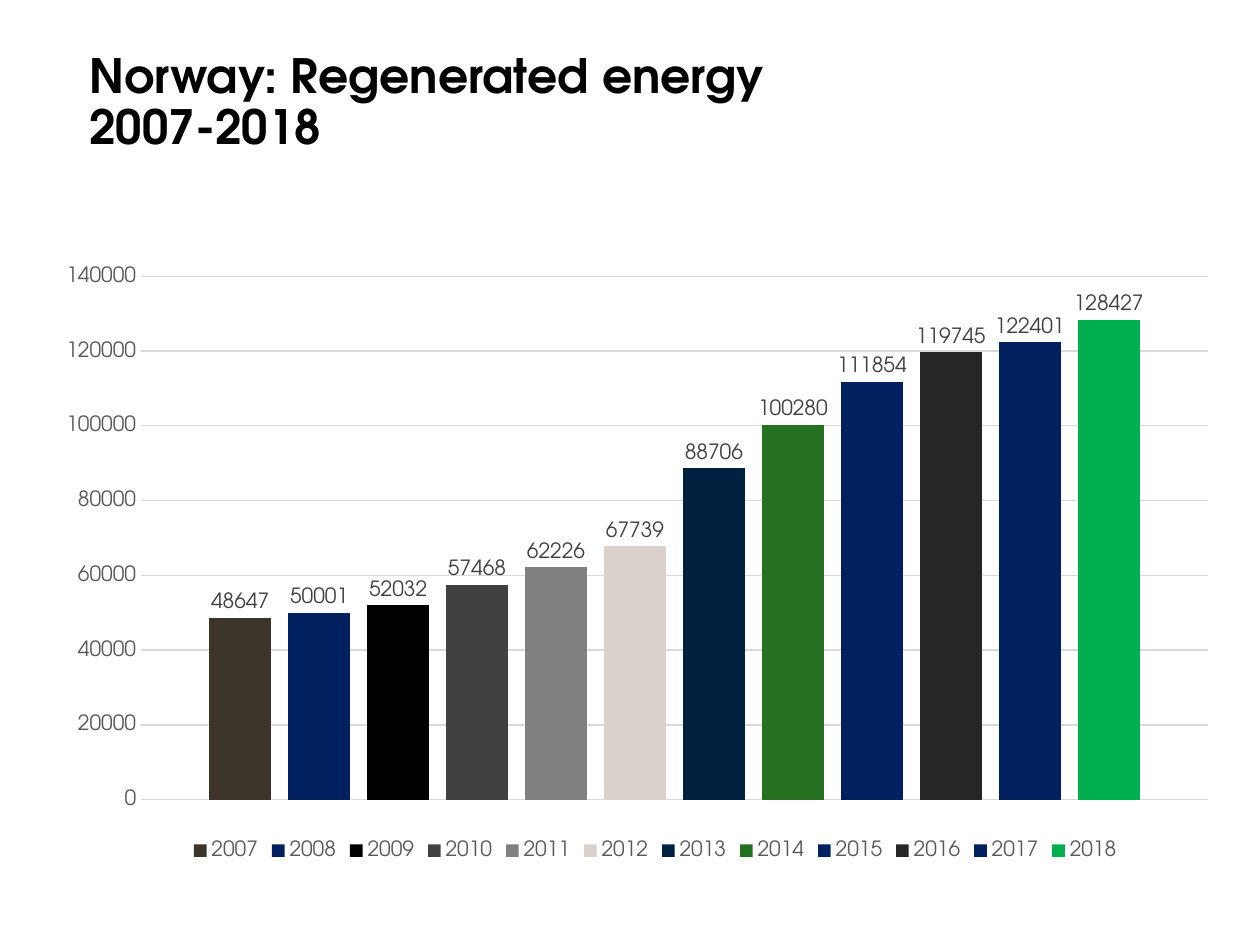
"""Build a slide with a column chart of Norway's regenerated energy by year."""
from dataclasses import dataclass

from lxml import etree
from pptx import Presentation
from pptx import util as u
from pptx.chart.data import CategoryChartData
from pptx.dml.color import RGBColor
from pptx.enum import chart as ch, text
from pptx.oxml.ns import qn


@dataclass(frozen=True)
class Theme:
    face: str = "TeX Gyre Adventor"
    ink: str = "000000"
    axis: str = "595959"
    label: str = "404040"
    grid: str = "D9D9D9"
    head: int = 27
    small: int = 12


THEME = Theme()
WIDE, HIGH = 10, 7.5
TITLE = ["Norway: Regenerated energy", "2007-2018"]
YEARS = [
    ("2007", 48647, "3D342C"),
    ("2008", 50001, "002060"),
    ("2009", 52032, "000000"),
    ("2010", 57468, "404040"),
    ("2011", 62226, "808080"),
    ("2012", 67739, "D9D1CA"),
    ("2013", 88706, "002241"),
    ("2014", 100280, "257122"),
    ("2015", 111854, "002060"),
    ("2016", 119745, "262626"),
    ("2017", 122401, "002060"),
    ("2018", 128427, "00B050"),
]
TITLE_BOX = (0.071, 0.048, 0.788, 0.116)
CHART_BOX = (0.04, 0.213, 0.96, 0.703)
PLOT = {"x": 0.075, "y": 0.113, "w": 0.882, "h": 0.788}


def place(box):
    """Turn shares of the slide into lengths."""
    return [u.Inches(part * size) for part, size in zip(box, (WIDE, HIGH) * 2)]


def style(font, size, color, bold=False):
    """Set face, size, colour and weight of a font."""
    font.name, font.size, font.bold = THEME.face, u.Pt(size), bold
    font.color.rgb = RGBColor.from_string(color)


def add_title(slide):
    """Fill and place the title."""
    title = slide.shapes.title
    title.left, title.top, title.width, title.height = place(TITLE_BOX)
    frame = title.text_frame
    frame.margin_left = frame.margin_top = 0
    frame.margin_right = frame.margin_bottom = 0
    frame.word_wrap = True
    frame.auto_size = text.MSO_AUTO_SIZE.NONE
    frame.vertical_anchor = text.MSO_ANCHOR.BOTTOM
    para = frame.paragraphs[0]
    para.text = "\n".join(TITLE)
    para.alignment = text.PP_ALIGN.LEFT
    para.line_spacing = 0.9
    style(para.font, THEME.head, THEME.ink, True)


def fix_plot(chart):
    """Pin the inner plot area to its share of the chart."""
    area = chart._chartSpace.chart.plotArea
    for old in area.findall(qn("c:layout")):
        area.remove(old)
    layout = etree.Element(qn("c:layout"))
    area.insert(0, layout)
    manual = etree.SubElement(layout, qn("c:manualLayout"))
    rules = {"layoutTarget": "inner", "xMode": "edge", "yMode": "edge", **PLOT}
    for tag, val in rules.items():
        etree.SubElement(manual, qn("c:" + tag)).set("val", str(val))


def add_chart(slide):
    """Draw one column per year, each a series of its own."""
    data = CategoryChartData()
    data.categories = ["1"]
    for year, value, _ in YEARS:
        data.add_series(year, [value])
    chart = slide.shapes.add_chart(
        ch.XL_CHART_TYPE.COLUMN_CLUSTERED, *place(CHART_BOX), data).chart
    style(chart.font, 10, THEME.ink)
    chart.has_title = False
    chart.has_legend = True
    chart.legend.position = ch.XL_LEGEND_POSITION.BOTTOM
    chart.legend.include_in_layout = False
    style(chart.legend.font, THEME.small, THEME.axis)

    chart.category_axis.visible = False
    axis = chart.value_axis
    axis.minimum_scale, axis.maximum_scale, axis.major_unit = 0, 140000, 20000
    axis.major_tick_mark = ch.XL_TICK_MARK.NONE
    axis.format.line.fill.background()
    style(axis.tick_labels.font, THEME.small, THEME.axis)
    line = axis.major_gridlines.format.line
    line.width = u.Pt(0.75)
    line.color.rgb = RGBColor.from_string(THEME.grid)

    plot = chart.plots[0]
    plot.gap_width, plot.overlap, plot.vary_by_categories = 219, -27, False
    for bar, (_, _, color) in zip(plot.series, YEARS):
        bar.format.fill.solid()
        bar.format.fill.fore_color.rgb = RGBColor.from_string(color)
        tags = bar.data_labels
        tags.show_value = True
        tags.position = ch.XL_LABEL_POSITION.OUTSIDE_END
        style(tags.font, THEME.small, THEME.label)
    fix_plot(chart)


def main():
    """Build and save the deck."""
    deck = Presentation()
    deck.slide_width, deck.slide_height = u.Inches(WIDE), u.Inches(HIGH)
    slide = deck.slides.add_slide(deck.slide_layouts[5])
    add_chart(slide)
    add_title(slide)
    deck.save("out.pptx")


if __name__ == "__main__":
    main()
